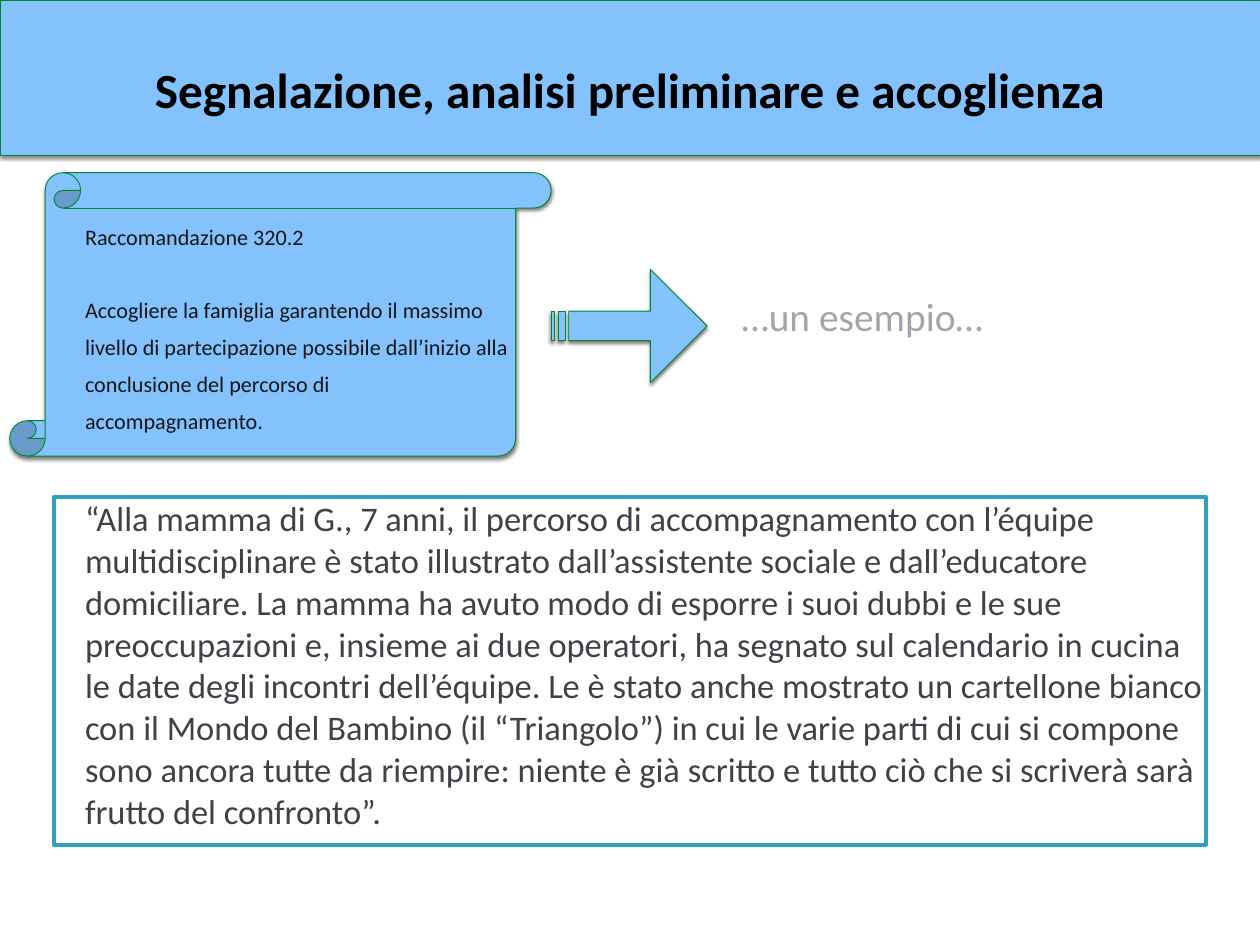
from lxml import etree
from pptx import Presentation
from pptx.dml.color import RGBColor
from pptx.enum.shapes import MSO_SHAPE
from pptx.enum.text import MSO_ANCHOR, PP_ALIGN
from pptx.oxml.ns import qn
from pptx.util import Inches, Pt

SCROLL = MSO_SHAPE.VERTICAL_SCROLL
ARROW = MSO_SHAPE.STRIPED_RIGHT_ARROW
RECT = MSO_SHAPE.RECTANGLE
TOP, MIDDLE = MSO_ANCHOR.TOP, MSO_ANCHOR.MIDDLE
LEFT, CENTER = PP_ALIGN.LEFT, PP_ALIGN.CENTER

BLUE = RGBColor(0x83, 0xC2, 0xFD)
GREEN = RGBColor(0x00, 0x85, 0x2A)
TEAL = RGBColor(0x2D, 0xA2, 0xBF)
BLACK = RGBColor(0x00, 0x00, 0x00)
INK = RGBColor(0x15, 0x16, 0x18)
GREY = RGBColor(0xA1, 0xA6, 0xAC)
SLATE = RGBColor(0x3E, 0x42, 0x47)

prs = Presentation()
prs.slide_width, prs.slide_height = Inches(14.22), Inches(10.67)
slide = prs.slides.add_slide(prs.slide_layouts[6])
shapes = slide.shapes


def add_panel(kind, *box):
    """Add a blue shape with a green outline and a soft shadow below."""
    panel = shapes.add_shape(kind, *map(Inches, box))
    panel.fill.solid()
    panel.fill.fore_color.rgb = BLUE
    panel.line.color.rgb = GREEN
    panel.line.width = Pt(0.75)
    panel.shadow.inherit = False
    effects = panel._element.spPr.find(qn("a:effectLst"))
    shadow = etree.SubElement(effects, qn("a:outerShdw"), blurRad=str(Pt(3)),
                              dist=str(Pt(2)), dir="5400000", rotWithShape="0")
    shade = etree.SubElement(shadow, qn("a:srgbClr"), val="000000")
    etree.SubElement(shade, qn("a:alpha"), val="50000")
    return panel


def set_text(shape, text, size, color, spacing, insets,
             anchor=TOP, align=LEFT, indent=0, bold=False):
    """Fill a shape with text; insets run left, top, right, bottom."""
    frame = shape.text_frame
    frame.word_wrap = True
    frame.vertical_anchor = anchor
    (frame.margin_left, frame.margin_top,
     frame.margin_right, frame.margin_bottom) = map(Inches, insets)
    frame.text = text
    for para in frame.paragraphs:
        para.alignment = align
        para.line_spacing = spacing
        props = para._p.get_or_add_pPr()
        props.set("marL", str(Inches(indent)))
        props.set("indent", "0")
        for run in para.runs:
            run.font.name = "Calibri"
            run.font.size = Pt(size)
            run.font.bold = bold
            run.font.color.rgb = color


SMALL = [0.06] * 4

# Recommendation scroll
scroll = add_panel(SCROLL, 0.11, 1.95, 6.11, 3.2)
set_text(scroll, "Raccomandazione 320.2\n"
         "Accogliere la famiglia garantendo il massimo livello di "
         "partecipazione possibile dall’inizio alla conclusione del "
         "percorso di accompagnamento.",
         18, INK, Pt(30), SMALL, anchor=MIDDLE, indent=0.39)
scroll.text_frame.paragraphs[1].space_before = Pt(30)

# Title band
band = add_panel(RECT, 0, 0, 14.22, 1.75)
set_text(band, "Segnalazione, analisi preliminare e accoglienza",
         40, BLACK, 0.9, [0.13, 0.74, 0.13, 0.06], align=CENTER, bold=True)

# Arrow to the example
arrow = add_panel(ARROW, 6.22, 3.04, 1.76, 1.28)
arrow.adjustments[0] = 0.26
arrow.adjustments[1] = 0.5

label = shapes.add_textbox(*map(Inches, (8.31, 3.47, 5.31, 0.44)))
set_text(label, "…un esempio…", 32, GREY, Pt(20), SMALL, anchor=MIDDLE)

# Example story
story = shapes.add_shape(RECT, *map(Inches, (0.61, 5.61, 13, 3.93)))
story.fill.background()
story.line.color.rgb = TEAL
story.line.width = Pt(3)
story.shadow.inherit = False
set_text(story, "“Alla mamma di G., 7 anni, il percorso di accompagnamento con "
         "l’équipe multidisciplinare è stato illustrato dall’assistente "
         "sociale e dall’educatore domiciliare. La mamma ha avuto modo di "
         "esporre i suoi dubbi e le sue preoccupazioni e, insieme ai due "
         "operatori, ha segnato sul calendario in cucina le date degli "
         "incontri dell’équipe. Le è stato anche mostrato un cartellone "
         "bianco con il Mondo del Bambino (il “Triangolo”) in cui le varie "
         "parti di cui si compone sono ancora tutte da riempire: niente è "
         "già scritto e tutto ciò che si scriverà sarà frutto del "
         "confronto”.",
         28, SLATE, Pt(34), [0] * 4, indent=0.35)

prs.save("out.pptx")
